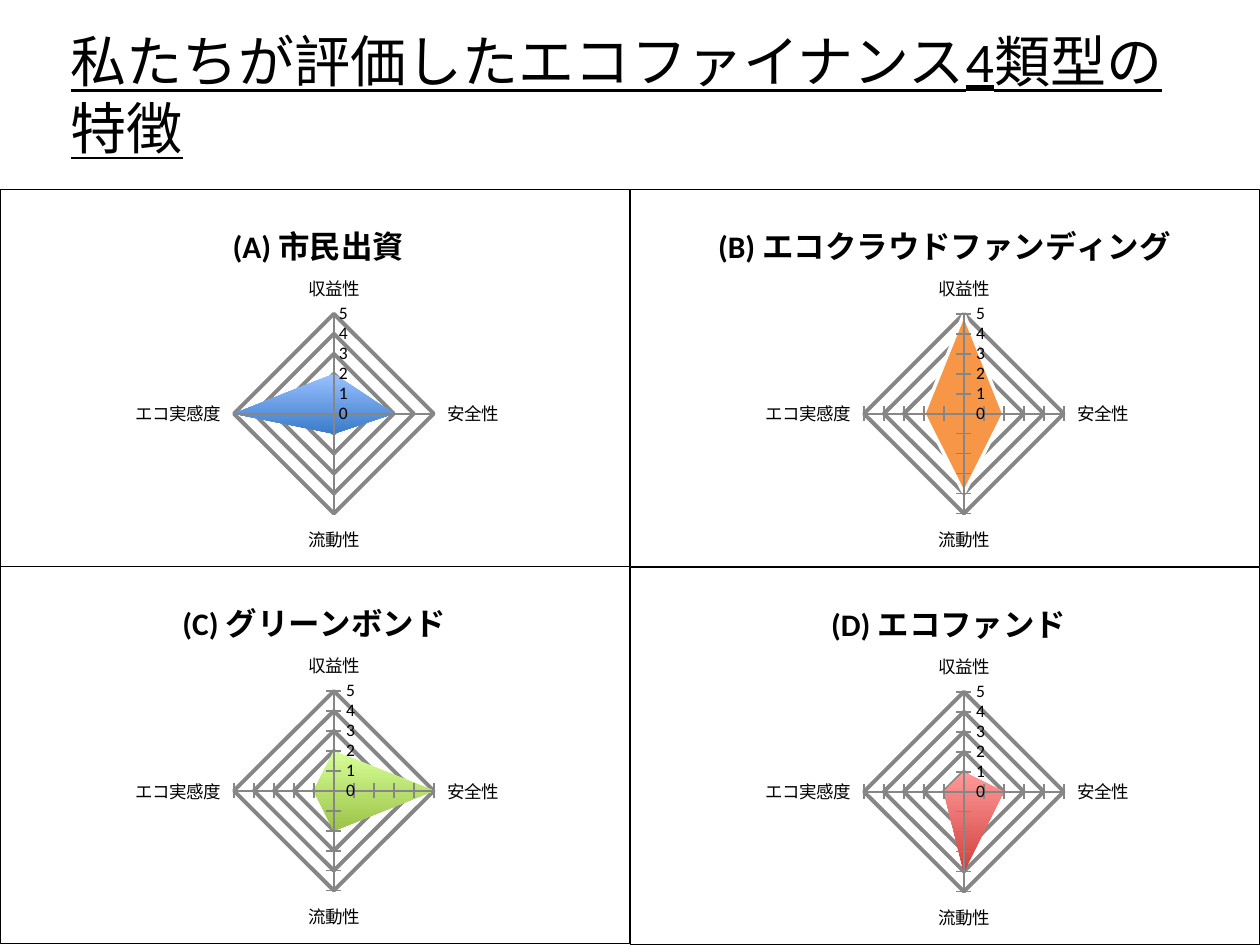
from dataclasses import dataclass

from lxml.etree import SubElement
from pptx import Presentation
from pptx.chart.data import CategoryChartData as Data
from pptx.dml.color import RGBColor
from pptx.enum.chart import XL_CHART_TYPE as Kind, XL_TICK_MARK as Tick
from pptx.oxml import parse_xml
from pptx.oxml.ns import nsdecls, qn
from pptx.util import Pt

FONT = "Calibri"
BLACK, GRAY, WHITE = "000000", "868686", "FFFFFF"
WIDE, HIGH = 360, 216
TRAITS = ["収益性", "安全性", "流動性", "エコ実感度"]


@dataclass
class Radar:
    """One type of eco finance: its scores, place and colours."""

    title: str
    scores: tuple
    col: int
    top: float
    start: float
    tints: tuple
    ticks: bool = True


RADARS = [
    Radar("(D) エコファンド", (1, 2, 4, 1), 1, 324, 0.31, ("FF9A99", "D1403C")),
    Radar("(A) 市民出資", (2, 3, 1, 5), 0, 108, 0.36, ("9BC1FF", "3A7CCB"), False),
    Radar("(B) エコクラウドファンディング", (5, 2, 4, 2), 1, 108, 0.13, ("F79646",)),
    Radar("(C) グリーンボンド", (2, 5, 2, 1), 0, 323.5, 0.28, ("D7FF97", "9BC348")),
]


def rgb(code: str) -> RGBColor:
    return RGBColor.from_string(code)


def style(font, size: float, bold: bool = False) -> None:
    font.name, font.size, font.bold = FONT, Pt(size), bold
    font.color.rgb = rgb(BLACK)


def stroke(line, code: str, width: float) -> None:
    line.color.rgb = rgb(code)
    line.width = Pt(width)


def layout(**parts) -> object:
    node = parse_xml(f"<c:layout {nsdecls('c')}><c:manualLayout/></c:layout>")
    for name, val in parts.items():
        SubElement(node[0], qn(f"c:{name}")).set("val", str(val))
    return node


def frame(chart) -> None:
    body = chart.element.find(qn("c:chart"))
    body.addnext(parse_xml(
        f"<c:spPr {nsdecls('c', 'a')}>"
        f'<a:solidFill><a:srgbClr val="{WHITE}"/></a:solidFill>'
        f'<a:ln w="{Pt(0.75)}"><a:solidFill><a:srgbClr val="{BLACK}"/>'
        "</a:solidFill></a:ln></c:spPr>"))


def place(chart, start: float) -> None:
    head = chart.element.find(f".//{qn('c:title')}")
    for old in head.findall(qn("c:layout")):
        head.remove(old)
    head.find(qn("c:tx")).addnext(
        layout(xMode="edge", yMode="edge", x=start, y=0.06))
    area = chart.element.find(f".//{qn('c:plotArea')}")
    for old in area.findall(qn("c:layout")):
        area.remove(old)
    area.insert(0, layout(layoutTarget="inner", xMode="edge", yMode="edge",
                          x=0.37, y=0.33, w=0.32, h=0.53))


def paint(series, tints: tuple) -> None:
    look = series.format
    if len(tints) == 1:
        look.fill.solid()
        look.fill.fore_color.rgb = rgb(tints[0])
        stroke(look.line, WHITE, 2)
        return
    look.fill.gradient()
    look.fill.gradient_angle = 270
    for stop, code in zip(look.fill.gradient_stops, tints):
        stop.color.rgb = rgb(code)
    look.line.fill.background()


def draw(slide, item: Radar) -> None:
    data = Data()
    data.categories = TRAITS
    data.add_series("Series 1", item.scores)
    chart = slide.shapes.add_chart(
        Kind.RADAR_FILLED, Pt(item.col * WIDE), Pt(item.top),
        Pt(WIDE), Pt(HIGH), data).chart
    style(chart.font, 10)
    chart.has_legend = False
    chart.has_title = True
    para = chart.chart_title.text_frame.paragraphs[0]
    para.text = item.title
    style(para.font, 18, True)
    chart.chart_title.include_in_layout = False
    cat, val = chart.category_axis, chart.value_axis
    val.minimum_scale, val.maximum_scale, val.major_unit = 0, 5, 1
    for axis, mark in ((cat, Tick.OUTSIDE), (val, Tick.CROSS)):
        axis.has_major_gridlines = True
        axis.major_tick_mark = mark if item.ticks else Tick.NONE
        axis.minor_tick_mark = Tick.NONE
        axis.tick_labels.number_format = "General"
        axis.tick_labels.number_format_is_linked = False
        style(axis.tick_labels.font, 10)
        stroke(axis.format.line, GRAY, 1)
    stroke(cat.major_gridlines.format.line, GRAY, 0.75)
    stroke(val.major_gridlines.format.line, GRAY, 2.25)
    plot = chart.plots[0]
    plot.vary_by_categories = False
    for node in chart.element.findall(f".//{qn('c:smooth')}"):
        node.getparent().remove(node)
    paint(plot.series[0], item.tints)
    frame(chart)
    place(chart, item.start)


def head(slide, text: str) -> None:
    box = slide.shapes.add_textbox(Pt(33.4), Pt(11.5), Pt(653), Pt(46))
    box.text_frame.word_wrap = True
    para = box.text_frame.paragraphs[0]
    para.text = text
    style(para.font, 32)
    para.font.underline = True


def main() -> None:
    deck = Presentation()
    deck.slide_width, deck.slide_height = Pt(720), Pt(540)
    slide = deck.slides.add_slide(deck.slide_layouts[6])
    for item in RADARS:
        draw(slide, item)
    head(slide, "私たちが評価したエコファイナンス4類型の特徴")
    deck.save("out.pptx")


if __name__ == "__main__":
    main()
